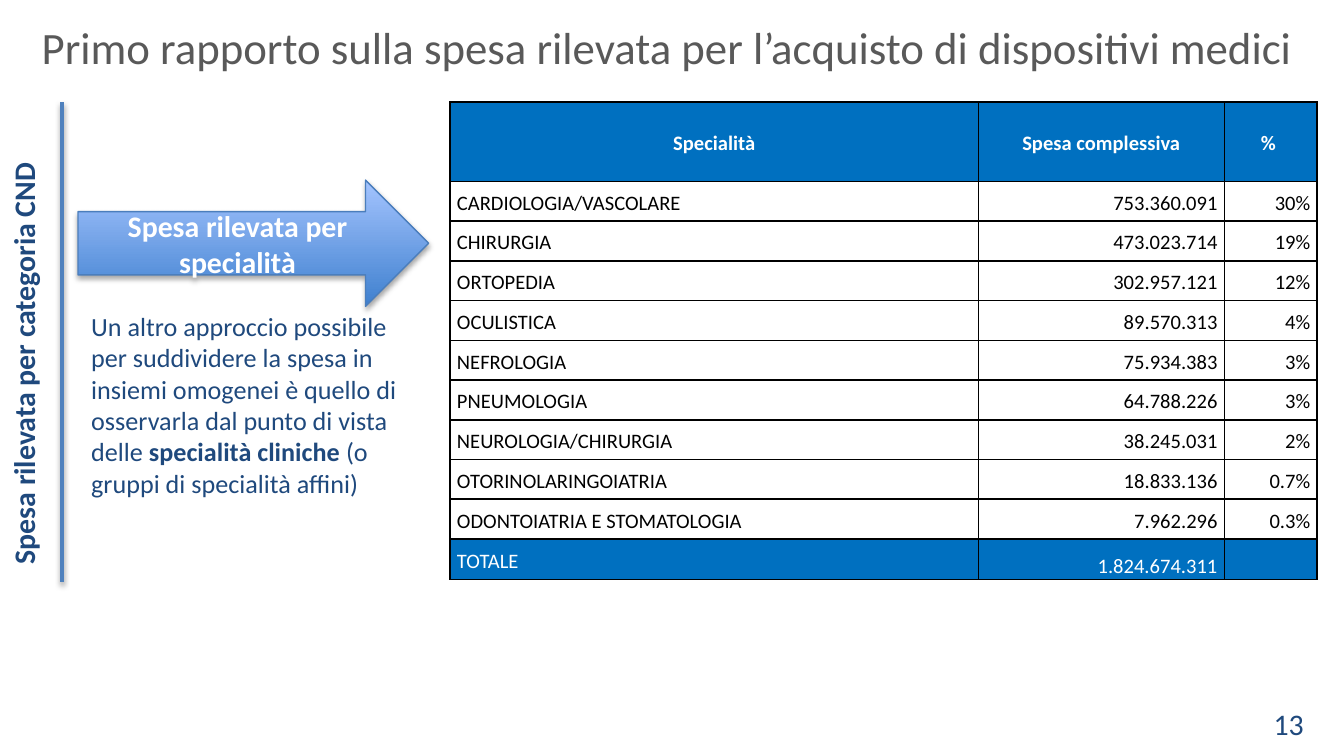
from lxml import etree
from pptx import Presentation
from pptx.dml.color import RGBColor
from pptx.enum.shapes import MSO_CONNECTOR, MSO_SHAPE
from pptx.enum.text import MSO_ANCHOR, PP_ALIGN
from pptx.oxml.ns import qn
from pptx.util import Inches, Pt

TITLE_ONLY = 5
LEFT, CENTER, RIGHT = PP_ALIGN.LEFT, PP_ALIGN.CENTER, PP_ALIGN.RIGHT
TOP, MIDDLE, BOTTOM = MSO_ANCHOR.TOP, MSO_ANCHOR.MIDDLE, MSO_ANCHOR.BOTTOM
STRAIGHT, RIGHT_ARROW = MSO_CONNECTOR.STRAIGHT, MSO_SHAPE.RIGHT_ARROW

FONT = "Calibri"
NAVY, BLUE, WHITE, BLACK = "1F497D", "0070C0", "FFFFFF", "000000"

HEADERS = ["Specialità", "Spesa complessiva", "% "]
SPENDING = [
    ("CARDIOLOGIA/VASCOLARE", "753.360.091", "30%"),
    ("CHIRURGIA", "473.023.714", "19%"),
    ("ORTOPEDIA", "302.957.121", "12%"),
    ("OCULISTICA", "89.570.313", "4%"),
    ("NEFROLOGIA", "75.934.383", "3%"),
    ("PNEUMOLOGIA", "64.788.226", "3%"),
    ("NEUROLOGIA/CHIRURGIA", "38.245.031", "2%"),
    ("OTORINOLARINGOIATRIA", "18.833.136", "0.7%"),
    ("ODONTOIATRIA E STOMATOLOGIA", "7.962.296", "0.3%"),
]
TOTAL = ("TOTALE", "1.824.674.311", "")


def rgb(hex_color):
    return RGBColor.from_string(hex_color)


def write(frame, text, size=14, color=NAVY, bold=False, align=LEFT,
          anchor=TOP, spacing=None):
    """Fill a text frame; text is a string or a list of (string, bold) runs."""
    frame.word_wrap = True
    frame.vertical_anchor = anchor
    paragraph = frame.paragraphs[0]
    paragraph.alignment = align
    paragraph.line_spacing = spacing
    runs = [(text, bold)] if isinstance(text, str) else text
    for words, is_bold in runs:
        run = paragraph.add_run()
        run.text = words
        run.font.name = FONT
        run.font.size = Pt(size)
        run.font.bold = is_bold
        run.font.color.rgb = rgb(color)


def add_shadow(shape, opacity, distance):
    """Cast a soft black shadow straight down; opacity in percent."""
    effects = etree.SubElement(shape._element.spPr, qn("a:effectLst"))
    shadow = etree.SubElement(
        effects, qn("a:outerShdw"), blurRad=str(Pt(3.1)),
        dist=str(Pt(distance)), dir="5400000", rotWithShape="0")
    color = etree.SubElement(shadow, qn("a:srgbClr"), val=BLACK)
    etree.SubElement(color, qn("a:alpha"), val=str(opacity * 1000))


def add_borders(cell):
    properties = cell._tc.get_or_add_tcPr()
    for side in ("lnL", "lnR", "lnT", "lnB"):
        line = etree.SubElement(properties, qn(f"a:{side}"), w=str(Pt(1)))
        fill = etree.SubElement(line, qn("a:solidFill"))
        etree.SubElement(fill, qn("a:srgbClr"), val=BLACK)


class SlideBuilder:
    def __init__(self, presentation):
        layout = presentation.slide_layouts[TITLE_ONLY]
        self.slide = presentation.slides.add_slide(layout)
        self.shapes = self.slide.shapes

    def title(self, text, left, top, width, height):
        title = self.shapes.title
        title.left, title.top = Inches(left), Inches(top)
        title.width, title.height = Inches(width), Inches(height)
        write(title.text_frame, text, size=24, color="595959", anchor=MIDDLE)

    def text(self, text, left, top, width, height, vertical=False, **style):
        box = self.shapes.add_textbox(
            Inches(left), Inches(top), Inches(width), Inches(height))
        if vertical:
            box.text_frame._txBody.bodyPr.set("vert", "vert270")
        write(box.text_frame, text, **style)

    def rule(self, x, top, bottom):
        rule = self.shapes.add_connector(
            STRAIGHT, Inches(x), Inches(top), Inches(x), Inches(bottom))
        rule.line.color.rgb = rgb("4F81BD")
        rule.line.width = Pt(2)
        add_shadow(rule, opacity=38, distance=1.6)

    def arrow(self, text, left, top, width, height):
        arrow = self.shapes.add_shape(
            RIGHT_ARROW, Inches(left), Inches(top), Inches(width), Inches(height))
        arrow.fill.gradient()
        arrow.fill.gradient_angle = 90
        colors = ("3F80CE", "A4C4FF")
        for position, stop in enumerate(arrow.fill.gradient_stops):
            stop.color.rgb = rgb(colors[position])
            stop.position = position
        arrow.line.color.rgb = rgb("4B7EBC")
        arrow.line.width = Pt(0.75)
        add_shadow(arrow, opacity=35, distance=1.8)
        write(arrow.text_frame, text, size=16, color=WHITE, bold=True,
              align=CENTER, anchor=MIDDLE)

    def cell(self, cell, text, fill=None, anchor=MIDDLE, **style):
        cell.margin_left = cell.margin_right = Inches(0.05)
        cell.margin_top = cell.margin_bottom = 0
        add_borders(cell)
        if fill:
            cell.fill.solid()
            cell.fill.fore_color.rgb = rgb(fill)
        else:
            cell.fill.background()
        write(cell.text_frame, text, size=11, spacing=1.15, **style)
        cell.vertical_anchor = anchor

    def spending_table(self, left, top, column_widths, height, header_height):
        rows = [HEADERS, *SPENDING, TOTAL]
        last = len(rows) - 1
        row_height = (height - header_height) / last
        table = self.shapes.add_table(
            len(rows), len(HEADERS), Inches(left), Inches(top),
            Inches(sum(column_widths)), Inches(height)).table
        table.first_row = table.horz_banding = False
        for column, width in zip(table.columns, column_widths):
            column.width = Inches(width)
        for r, values in enumerate(rows):
            is_header, is_total = r == 0, r == last
            table.rows[r].height = Inches(header_height if is_header else row_height)
            highlighted = is_header or is_total
            for c, value in enumerate(values):
                self.cell(
                    table.cell(r, c), value,
                    fill=BLUE if highlighted else None,
                    color=WHITE if highlighted else BLACK,
                    bold=is_header,
                    align=CENTER if is_header else RIGHT if c else LEFT,
                    anchor=BOTTOM if is_total and c else MIDDLE)


def main():
    presentation = Presentation()
    presentation.slide_width = Inches(10)
    presentation.slide_height = presentation.slide_width * 9 // 16
    page = SlideBuilder(presentation)
    page.title("Primo rapporto sulla spesa rilevata per l’acquisto di dispositivi medici",
               0.21, 0.1, 9.59, 0.49)
    page.text("13", 7.47, 5.2, 2.33, 0.3, size=16, align=RIGHT)
    page.rule(0.46, 0.76, 4.33)
    page.arrow("Spesa rilevata per specialità", 0.58, 1.34, 2.61, 0.94)
    page.text("Spesa rilevata per categoria CND", -0.01, 0.57, 0.47, 4.27,
              vertical=True, size=16, bold=True, align=CENTER)
    page.spending_table(3.35, 0.76, (3.93, 1.83, 0.69), 3.55, 0.59)
    page.text([
        ("Un altro approccio possibile per suddividere la spesa in insiemi omogenei "
         "è quello di osservarla dal punto di vista delle ", False),
        ("specialità cliniche ", True),
        ("(o gruppi di specialità affini)", False),
    ], 0.58, 2.26, 2.61, 1.51)
    presentation.save("out.pptx")


if __name__ == "__main__":
    main()
